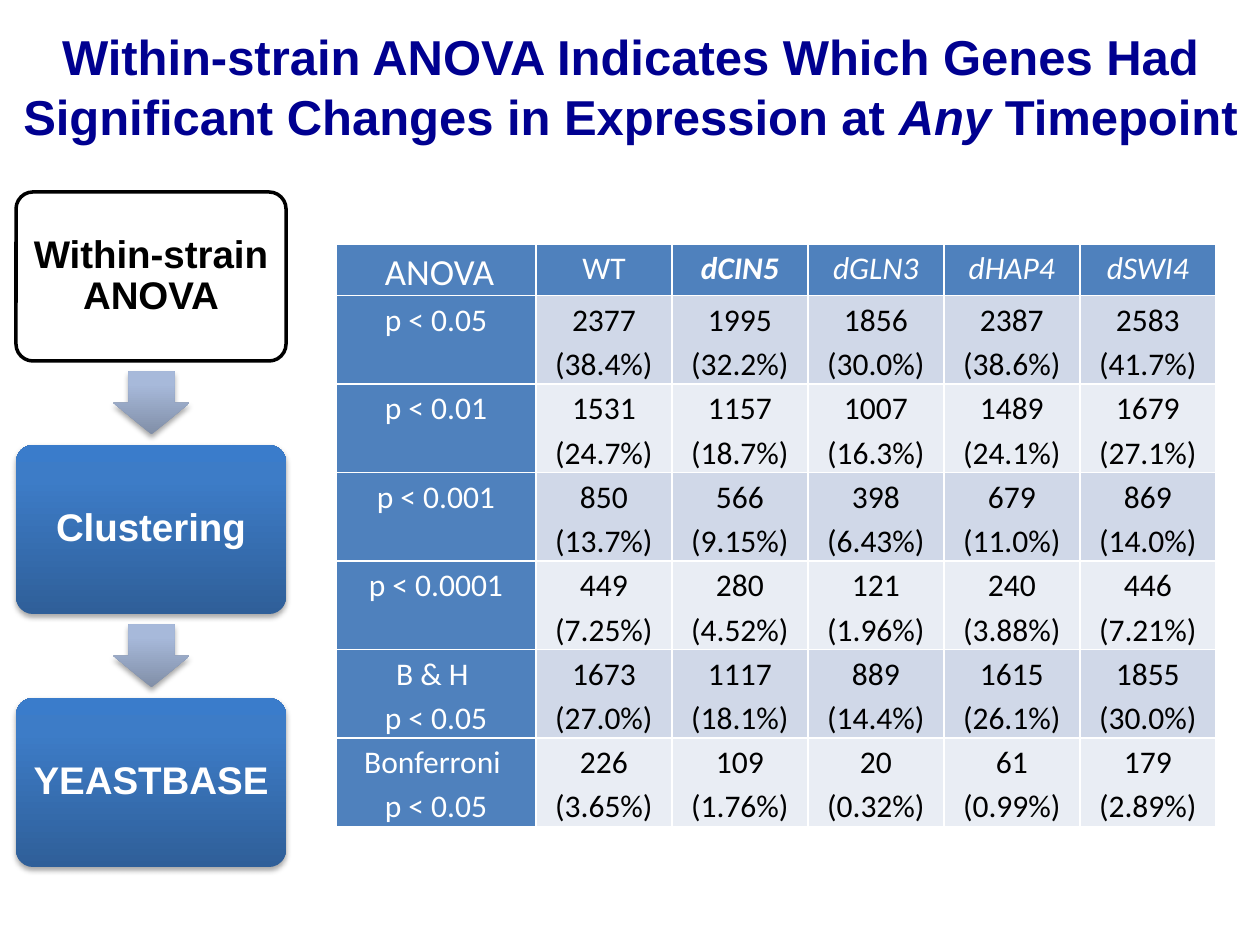
import pptx
import pptx.dml.color
import pptx.enum.shapes
import pptx.enum.text
import pptx.oxml
import pptx.oxml.ns
import pptx.util

EMU_PER_PX = 914400 / 126
XMLNS = pptx.oxml.ns.nsdecls("a")
MIDDLE = pptx.enum.text.MSO_ANCHOR.MIDDLE
CENTER = pptx.enum.text.PP_ALIGN.CENTER
SHAPES = pptx.enum.shapes.MSO_SHAPE

NAVY, WHITE, BLACK = "000090", "FFFFFF", "000000"
HEADER_BLUE, BANDS = "4F81BD", ("D0D8E8", "E9EDF4")
BOX_STOPS = ((0, "2F5F99"), (80, "3D7CC7"), (100, "3A7CCB"))
ARROW_STOPS = ((0, "818FA8"), (80, "A7B9DA"), (100, "A7BADC"))

HEADINGS = ("WT", "dCIN5", "dGLN3", "dHAP4", "dSWI4")
RESULTS = (
    ("p < 0.05", "2377 (38.4%)", "1995 (32.2%)", "1856 (30.0%)", "2387 (38.6%)", "2583 (41.7%)"),
    ("p < 0.01", "1531 (24.7%)", "1157 (18.7%)", "1007 (16.3%)", "1489 (24.1%)", "1679 (27.1%)"),
    ("p < 0.001", "850 (13.7%)", "566 (9.15%)", "398 (6.43%)", "679 (11.0%)", "869 (14.0%)"),
    ("p < 0.0001", "449 (7.25%)", "280 (4.52%)", "121 (1.96%)", "240 (3.88%)", "446 (7.21%)"),
    ("B & H \np < 0.05", "1673 (27.0%)", "1117 (18.1%)", "889 (14.4%)", "1615 (26.1%)", "1855 (30.0%)"),
    ("Bonferroni \np < 0.05", "226 (3.65%)", "109 (1.76%)", "20 (0.32%)", "61 (0.99%)", "179 (2.89%)"),
)
STEPS = ("Within-strain ANOVA", "Clustering", "YEASTBASE")


def px(length):
    return pptx.util.Emu(round(length * EMU_PER_PX))


def color(value):
    return pptx.dml.color.RGBColor.from_string(value)


def apply(target, values):
    for name, value in values.items():
        setattr(target, name, value)


class Painter:
    def __init__(self, page):
        self.page = page
        self.heading_font = "Arial"
        self.table_font = "Calibri"

    def span(self, para, text, font, size, tint, bold=False, italic=False):
        span = para.add_run()
        span.text = text
        apply(span.font, {"name": font, "size": pptx.util.Pt(size), "bold": bold, "italic": italic})
        span.font.color.rgb = color(tint)

    def frame(self, frame, across, down):
        apply(frame, {
            "word_wrap": True, "vertical_anchor": MIDDLE,
            "margin_left": px(across), "margin_right": px(across),
            "margin_top": px(down), "margin_bottom": px(down),
        })
        return frame.paragraphs[0]

    def title(self, left, top, width, height, pieces):
        box = self.page.shapes.title
        apply(box, {"left": px(left), "top": px(top), "width": px(width), "height": px(height)})
        para = self.frame(box.text_frame, 0, 6)
        box.text_frame.auto_size = pptx.enum.text.MSO_AUTO_SIZE.NONE
        apply(para, {"alignment": CENTER, "line_spacing": pptx.util.Pt(34)})
        for text, italic in pieces:
            self.span(para, text, self.heading_font, 28, NAVY, True, italic)
        para.add_line_break()

    def shape(self, kind, left, top, width, height, adjustments):
        shape = self.page.shapes.add_shape(kind, px(left), px(top), px(width), px(height))
        for index, value in enumerate(adjustments):
            shape.adjustments[index] = value
        shape.shadow.inherit = False
        shape.fill.solid()
        shape.fill.fore_color.rgb = color(WHITE)
        return shape

    def shade(self, shape, stops):
        shape.line.fill.background()
        properties = shape.element.spPr
        marks = "".join(
            f'<a:gs pos="{place * 1000}"><a:srgbClr val="{tint}"/></a:gs>' for place, tint in stops)
        gradient = pptx.oxml.parse_xml(
            f'<a:gradFill {XMLNS} rotWithShape="0"><a:gsLst>{marks}</a:gsLst>'
            '<a:lin ang="16200000" scaled="0"/></a:gradFill>')
        solid = properties.find(pptx.oxml.ns.qn("a:solidFill"))
        properties.replace(solid, gradient)
        effects = properties.find(pptx.oxml.ns.qn("a:effectLst"))
        effects.append(pptx.oxml.parse_xml(
            f'<a:outerShdw {XMLNS} blurRad="40000" dist="23000" dir="5400000" rotWithShape="0">'
            '<a:srgbClr val="000000"><a:alpha val="35000"/></a:srgbClr></a:outerShdw>'))

    def step(self, left, top, width, height, text, current):
        box = self.shape(SHAPES.ROUNDED_RECTANGLE, left, top, width, height, (0.1,))
        if current:
            box.line.color.rgb = color(BLACK)
            box.line.width = pptx.util.Pt(2)
        else:
            self.shade(box, BOX_STOPS)
        para = self.frame(box.text_frame, 9, 11)
        apply(para, {"alignment": CENTER, "line_spacing": 0.9})
        self.span(para, text, self.heading_font, 22, BLACK if current else WHITE, True)

    def arrow(self, left, top, width, height):
        arrow = self.shape(SHAPES.RIGHT_ARROW, left, top, width, height, (0.6, 0.5))
        arrow.rotation = 90
        self.shade(arrow, ARROW_STOPS)

    def cell(self, cell, paragraphs, fill):
        properties = cell._tc.get_or_add_tcPr()
        for side in "LRTB":
            properties.append(pptx.oxml.parse_xml(
                f'<a:ln{side} {XMLNS} w="12700"><a:solidFill><a:srgbClr val="{WHITE}"/>'
                f'</a:solidFill></a:ln{side}>'))
        cell.fill.solid()
        cell.fill.fore_color.rgb = color(fill)
        apply(cell, {"margin_left": px(9), "margin_right": px(9), "margin_top": 0, "margin_bottom": 0})
        for index, spans in enumerate(paragraphs):
            frame = cell.text_frame
            para = frame.add_paragraph() if index else frame.paragraphs[0]
            apply(para, {"alignment": CENTER, "line_spacing": 1.15})
            for text, size, tint, bold, italic in spans:
                self.span(para, text, self.table_font, size, tint, bold, italic)

    def table(self, left, top, widths, heights):
        table = self.page.shapes.add_table(
            len(heights), len(widths), px(left), px(top), px(sum(widths)), px(sum(heights))).table
        for column, width in zip(table.columns, widths):
            column.width = px(width)
        for row, height in zip(table.rows, heights):
            row.height = px(height)

        corner = [(" ", 18, BLACK, False, False), ("ANOVA", 21, WHITE, False, False)]
        self.cell(table.cell(0, 0), [corner], HEADER_BLUE)
        for column, text in enumerate(HEADINGS, 1):
            heading = (text, 18, WHITE, text == "dCIN5", text != "WT")
            self.cell(table.cell(0, column), [[heading]], HEADER_BLUE)
        for row, (label, *values) in enumerate(RESULTS, 1):
            lines = [[(line, 18, WHITE, False, False)] for line in label.split("\n")]
            self.cell(table.cell(row, 0), lines, HEADER_BLUE)
            for column, value in enumerate(values, 1):
                lines = [[(line, 18, BLACK, False, False)] for line in value.split()]
                self.cell(table.cell(row, column), lines, BANDS[(row - 1) % 2])


def main():
    deck = pptx.Presentation()
    deck.slide_width, deck.slide_height = px(1260), px(945)
    painter = Painter(deck.slides.add_slide(deck.slide_layouts[5]))
    painter.title(6, 37, 1249, 157, (
        ("Within-strain ANOVA Indicates Which Genes Had Significant Changes in Expression at ", False),
        ("Any ", True), ("Timepoint", False)))
    painter.table(336, 244, [200] + [136] * 5, [47] + [81] * 5 + [87])
    for index, text in enumerate(STEPS):
        top = 192 + 253 * index
        if index:
            painter.arrow(120, top - 80, 63, 76)
        painter.step(16, top, 270, 169, text, index == 0)
    deck.save("out.pptx")


if __name__ == "__main__":
    main()
